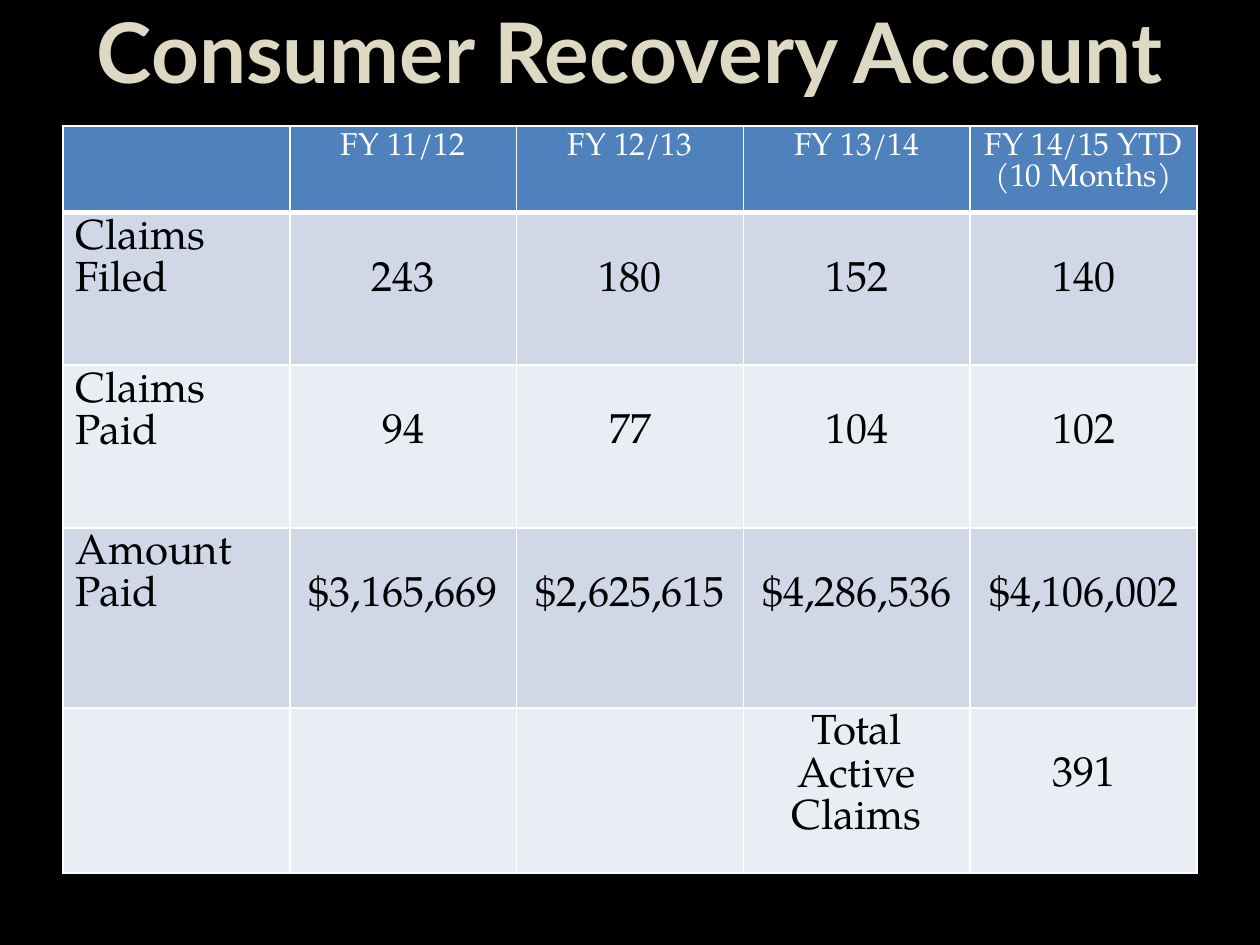
from dataclasses import dataclass

from lxml.etree import SubElement
from pptx import Presentation
from pptx.dml.color import RGBColor
from pptx.enum.text import MSO_ANCHOR, MSO_AUTO_SIZE, PP_ALIGN
from pptx.oxml.ns import qn
from pptx.slide import Slide
from pptx.table import _Cell
from pptx.text.text import TextFrame
from pptx.util import Cm, Pt


@dataclass(frozen=True)
class Theme:
    background: str = "000000"
    title: str = "DDD9C3"
    header_fill: str = "4F81BD"
    header_text: str = "FFFFFF"
    bands: tuple[str, str] = ("D0D8E8", "E9EDF4")
    body_text: str = "000000"
    border: str = "FFFFFF"
    title_font: str = "Lato"
    table_font: str = "TeX Gyre Pagella"
    title_size: float = 47.7
    header_size: float = 18
    body_size: float = 24
    border_width: float = 1
    header_rule: float = 3


@dataclass(frozen=True)
class ClaimsRow:
    height: float
    entries: tuple[str, ...]


THEME = Theme()
LEFT, WIDTH = Cm(1.27), Cm(22.86)
CELL_TOP = Cm(0.13)
YEARS = ClaimsRow(1.75, ("", "FY 11/12", "FY 12/13", "FY 13/14", "FY 14/15 YTD\n(10 Months)"))
CLAIMS = (
    ClaimsRow(3.07, ("Claims Filed", "243", "180", "152", "140")),
    ClaimsRow(3.28, ("Claims Paid", "94", "77", "104", "102")),
    ClaimsRow(3.63, ("Amount Paid", "$3,165,669", "$2,625,615", "$4,286,536", "$4,106,002")),
    ClaimsRow(3.33, ("", "", "", "Total Active Claims", "391")),
)


def format_text(frame: TextFrame, font: str, size: float, color: str,
                align: PP_ALIGN, bold: bool = False) -> None:
    for paragraph in frame.paragraphs:
        paragraph.alignment = align
        for run in paragraph.runs:
            run.font.name = font
            run.font.size = Pt(size)
            run.font.bold = bold
            run.font.color.rgb = RGBColor.from_string(color)


def set_borders(cell: _Cell, bottom_width: float) -> None:
    properties = cell._tc.get_or_add_tcPr()
    for side in ("L", "R", "T", "B"):
        width = bottom_width if side == "B" else THEME.border_width
        line = SubElement(properties, qn(f"a:ln{side}"), w=str(Pt(width)))
        fill = SubElement(line, qn("a:solidFill"))
        SubElement(fill, qn("a:srgbClr"), val=THEME.border)


def fill_cell(cell: _Cell, entry: str, fill: str, size: float, color: str,
              align: PP_ALIGN, bottom_width: float) -> None:
    cell.text_frame.text = entry
    format_text(cell.text_frame, THEME.table_font, size, color, align)
    set_borders(cell, bottom_width)
    cell.fill.solid()
    cell.fill.fore_color.rgb = RGBColor.from_string(fill)


def add_title(slide: Slide, heading: str) -> None:
    title = slide.shapes.title
    title.left, title.top, title.width, title.height = LEFT, Cm(1.07), WIDTH, Cm(1.47)
    frame = title.text_frame
    frame.text = heading
    frame.auto_size = MSO_AUTO_SIZE.NONE
    frame.vertical_anchor = MSO_ANCHOR.BOTTOM
    frame.margin_top, frame.margin_bottom = 0, Cm(0.51)
    format_text(frame, THEME.title_font, THEME.title_size, THEME.title, PP_ALIGN.CENTER, True)


def add_claims_table(slide: Slide) -> None:
    rows = (YEARS, *CLAIMS)
    column_count = len(YEARS.entries)
    table = slide.shapes.add_table(len(rows), column_count, LEFT, Cm(2.54), WIDTH,
                                   Cm(sum(row.height for row in rows))).table
    for column in table.columns:
        column.width = WIDTH // column_count
    for table_row, row in zip(table.rows, rows):
        table_row.height = Cm(row.height)
    for cell, year in zip(table.rows[0].cells, YEARS.entries):
        fill_cell(cell, year, THEME.header_fill, THEME.header_size, THEME.header_text,
                  PP_ALIGN.CENTER, THEME.header_rule)
    for index, row in enumerate(CLAIMS):
        for column, entry in enumerate(row.entries):
            cell = table.cell(index + 1, column)
            align = PP_ALIGN.CENTER if column else PP_ALIGN.LEFT
            fill_cell(cell, entry, THEME.bands[index % 2], THEME.body_size,
                      THEME.body_text, align, THEME.border_width)
            is_figure = entry.lstrip("$").replace(",", "").isdigit()
            cell.margin_top = CELL_TOP + Pt(THEME.body_size) if is_figure else CELL_TOP


def main() -> None:
    deck = Presentation()
    deck.slide_width, deck.slide_height = Cm(25.4), Cm(19.05)
    slide = deck.slides.add_slide(deck.slide_layouts[5])
    slide.background.fill.solid()
    slide.background.fill.fore_color.rgb = RGBColor.from_string(THEME.background)
    add_title(slide, "Consumer Recovery Account")
    add_claims_table(slide)
    deck.save("out.pptx")


if __name__ == "__main__":
    main()
